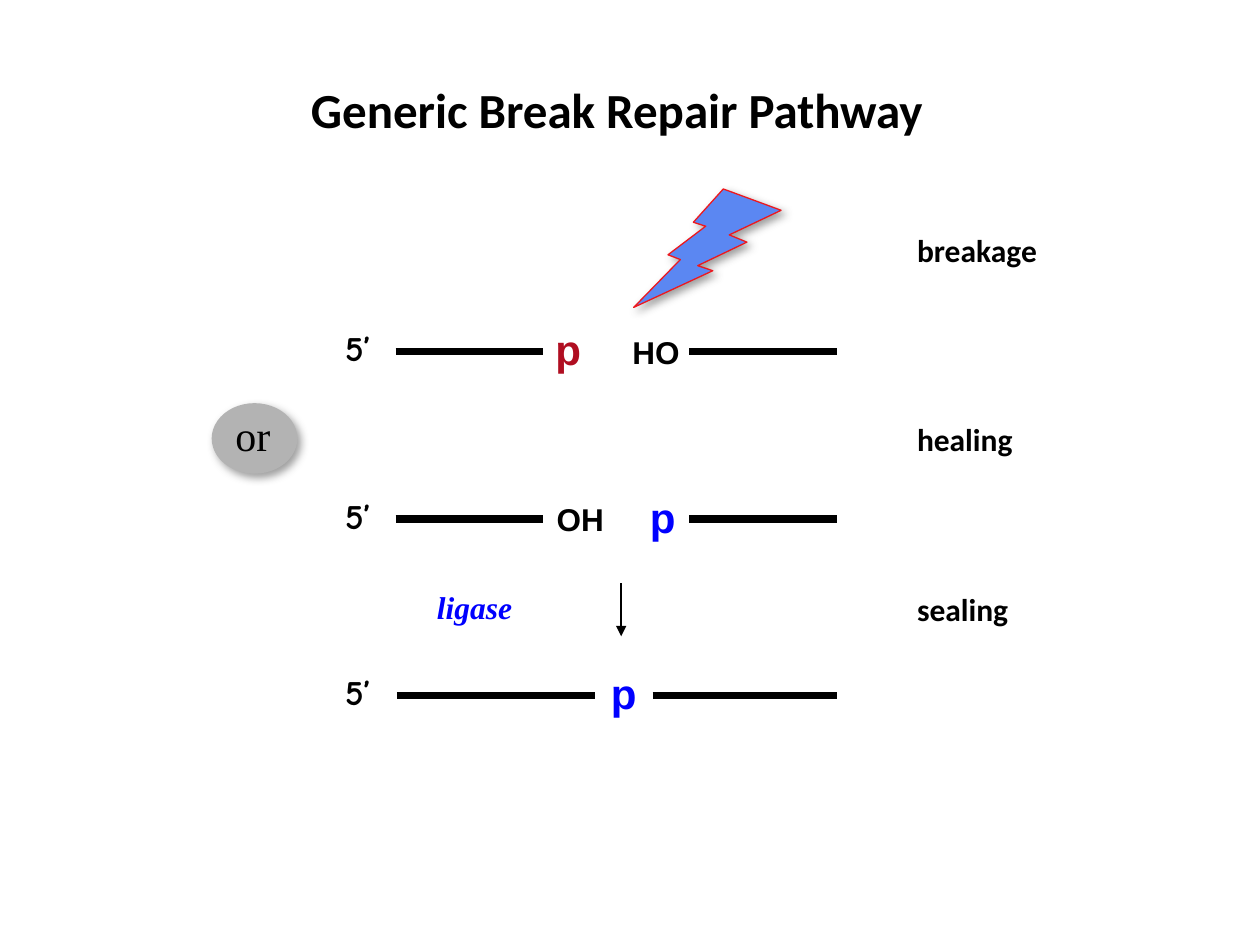
from dataclasses import dataclass

import lxml.etree
import pptx
import pptx.dml.color
import pptx.enum.shapes
import pptx.enum.text
import pptx.oxml.ns
import pptx.util

COLORS = {
    "ink": "000000", "red": "B00E21", "blue": "0000FF", "gray": "B3B3B3",
    "bolt": "5B87F2", "bolt edge": "ED181E", "shadow": "808080",
}
SHAPES = pptx.enum.shapes.MSO_SHAPE
ALIGN = pptx.enum.text.PP_ALIGN
ANCHOR = pptx.enum.text.MSO_ANCHOR

# The page is a grid of 100 columns and 75 rows of square cells
COLUMNS, ROWS = 100, 75
CELL = pptx.util.Inches(10) // COLUMNS


@dataclass(frozen=True)
class Style:
    font: str
    size: int
    color: str = "ink"
    bold: bool = True
    italic: bool = False
    wrap: bool = True
    spacing: float = 1.0
    inset: float = 0.5  # top inset in rows
    hanging: float = 0
    centered: bool = False


@dataclass(frozen=True)
class Strand:
    row: float
    segments: tuple[tuple[float, float], ...]
    groups: tuple[tuple[str, float, str], ...]  # text, column, style


STYLES = {
    "title": Style("Calibri", 28, centered=True),
    "stage": Style("Calibri", 18, spacing=0.9, inset=0.7, hanging=3.8),
    "prime": Style("Comic Neue", 20, spacing=0.9, hanging=3.8),
    "hydroxyl": Style("Arial", 18),
    "red phosphate": Style("Arial", 24, "red", wrap=False),
    "blue phosphate": Style("Arial", 24, "blue", wrap=False),
    "or": Style("Times New Roman", 24, bold=False, wrap=False),
    "enzyme": Style("Times New Roman", 18, "blue", italic=True, wrap=False),
}
# Width, height and rise above the strand for each kind of end group
GROUP_BOXES = {
    "hydroxyl": (7.9, 4, 2),
    "red phosphate": (4, 5, 2.7),
    "blue phosphate": (4, 5, 2.7),
}
BROKEN = ((31.4, 43.1), (54.7, 66.4))
STRANDS = (
    Strand(27.9, BROKEN, (("p", 43.1, "red phosphate"), ("HO", 49.2, "hydroxyl"))),
    Strand(41.2, BROKEN, (("OH", 43.2, "hydroxyl"), ("p", 50.6, "blue phosphate"))),
    Strand(55.2, ((31.5, 47.2), (51.8, 66.4)), (("p", 47.5, "blue phosphate"),)),
)
STAGES = (("breakage", 18), ("healing", 33), ("sealing", 46.5))


def cells(count: float) -> int:
    return round(count * CELL)


def rgb(name: str) -> pptx.dml.color.RGBColor:
    return pptx.dml.color.RGBColor.from_string(COLORS[name])


def add_text(page, text: str, left: float, top: float, width: float,
             height: float, style_name: str) -> None:
    style = STYLES[style_name]
    box = page.shapes.add_textbox(*map(cells, (left, top, width, height)))
    frame = box.text_frame
    frame.text = text
    frame.word_wrap = style.wrap
    frame.margin_top = cells(style.inset)
    frame.vertical_anchor = ANCHOR.MIDDLE if style.centered else ANCHOR.TOP
    para = frame.paragraphs[0]
    para.alignment = ALIGN.CENTER if style.centered else ALIGN.LEFT
    para.line_spacing = style.spacing
    if style.hanging:
        properties = para._p.get_or_add_pPr()
        properties.set("marL", str(cells(style.hanging)))
        properties.set("indent", str(-cells(style.hanging)))
    span = para.runs[0]
    span.font.name = style.font
    span.font.size = pptx.util.Pt(style.size)
    span.font.bold = style.bold
    span.font.italic = style.italic
    span.font.color.rgb = rgb(style.color)


def add_line(page, start: tuple[float, float], end: tuple[float, float],
             weight: float, arrow: bool = False) -> None:
    line = page.shapes.add_connector(
        pptx.enum.shapes.MSO_CONNECTOR.STRAIGHT, *map(cells, start + end))
    line.line.color.rgb = rgb("ink")
    line.line.width = pptx.util.Pt(weight)
    if arrow:
        head = lxml.etree.SubElement(
            line.line._get_or_add_ln(), pptx.oxml.ns.qn("a:tailEnd"))
        head.set("type", "triangle")
    lxml.etree.SubElement(line._element.spPr, pptx.oxml.ns.qn("a:effectLst"))


def add_shadowed_shape(page, kind, left: float, top: float, width: float,
                       height: float, fill: str, edge: str | None = None):
    shape = page.shapes.add_shape(kind, *map(cells, (left, top, width, height)))
    shape.fill.solid()
    shape.fill.fore_color.rgb = rgb(fill)
    if edge:
        shape.line.color.rgb = rgb(edge)
        shape.line.width = pptx.util.Pt(0.75)
    else:
        shape.line.fill.background()
    shape.shadow.inherit = False
    effects = shape._element.spPr.find(pptx.oxml.ns.qn("a:effectLst"))
    shadow = lxml.etree.SubElement(
        effects, pptx.oxml.ns.qn("a:outerShdw"),
        blurRad=str(pptx.util.Pt(5)), dist=str(pptx.util.Pt(3)),
        dir=str(45 * 60000), algn="ctr", rotWithShape="0")
    color = lxml.etree.SubElement(
        shadow, pptx.oxml.ns.qn("a:srgbClr"), val=COLORS["shadow"])
    lxml.etree.SubElement(color, pptx.oxml.ns.qn("a:alpha"), val="75000")
    return shape


def add_strand(page, strand: Strand) -> None:
    for first, last in strand.segments:
        add_line(page, (first, strand.row), (last, strand.row), 4.5)
    add_text(page, "5’", 26.4, strand.row - 2.1, 5.8, 4.6, "prime")
    for text, column, style_name in strand.groups:
        width, height, rise = GROUP_BOXES[style_name]
        add_text(page, text, column, strand.row - rise, width, height, style_name)


def main() -> None:
    deck = pptx.Presentation()
    deck.slide_width = cells(COLUMNS)
    deck.slide_height = cells(ROWS)
    page = deck.slides.add_slide(deck.slide_layouts[6])

    # Title
    add_text(page, "Generic Break Repair Pathway", 18.8, 4.9, 60.3, 7.5, "title")

    # Alternative end chemistry
    add_shadowed_shape(page, SHAPES.OVAL, 16.8, 32, 6.8, 5.6, "gray")
    add_text(page, "or", 17.7, 32, 4.8, 5, "or")

    # DNA strands
    for strand in STRANDS:
        add_strand(page, strand)

    # Damage bolt, mirrored to strike from the right
    bolt = add_shadowed_shape(page, SHAPES.LIGHTNING_BOLT, 50.3, 15, 11.7, 9.4,
                              "bolt", "bolt edge")
    bolt._element.spPr.xfrm.set("flipH", "1")

    # Ligase step
    add_line(page, (49.3, 46.3), (49.3, 50.5), 1.25, arrow=True)
    add_text(page, "ligase", 33.7, 46.2, 8, 4, "enzyme")

    # Stage names
    for name, row in STAGES:
        add_text(page, name, 71.8, row, 16.4, 5, "stage")

    deck.save("out.pptx")


if __name__ == "__main__":
    main()
